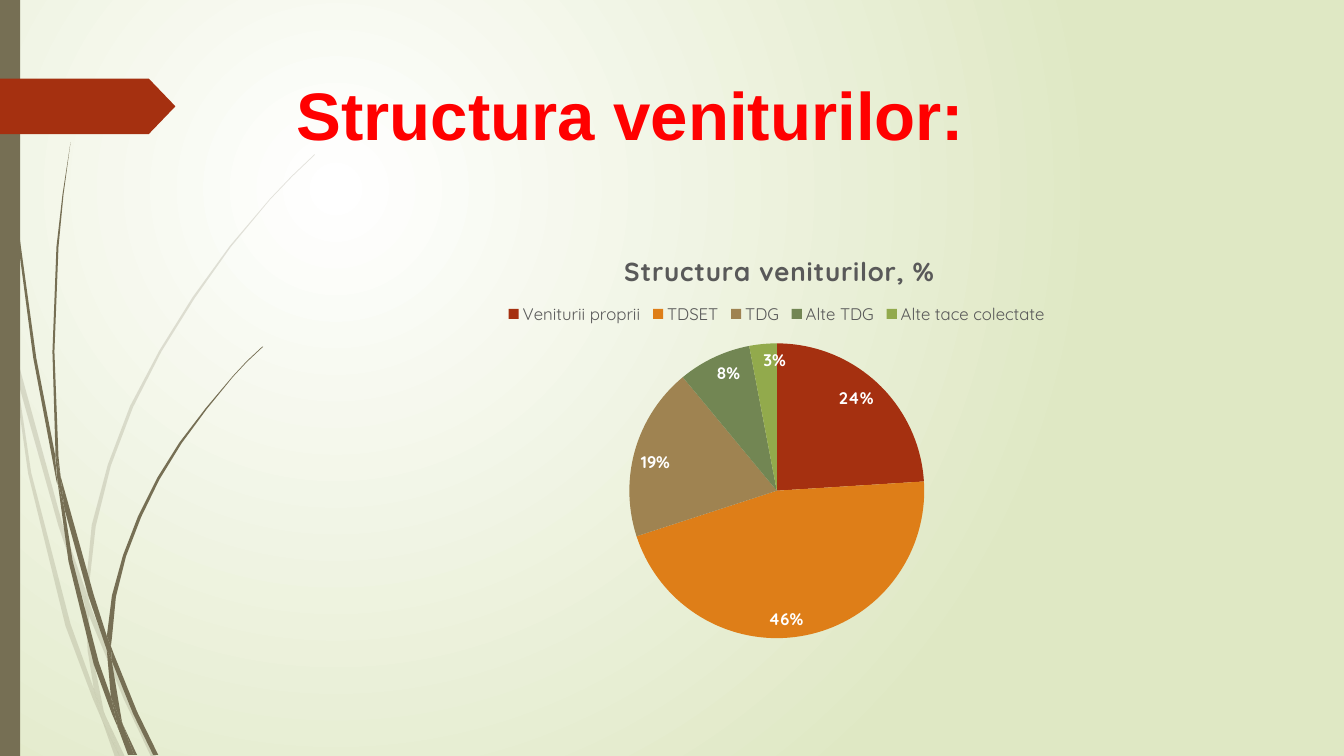
from lxml.etree import SubElement
from pptx import Presentation
from pptx.chart.data import CategoryChartData
from pptx.dml.color import RGBColor
from pptx.enum.chart import (XL_CHART_TYPE as CHART, XL_LABEL_POSITION as LABEL,
                             XL_LEGEND_POSITION as LEGEND)
from pptx.enum.shapes import MSO_SHAPE as SHAPE
from pptx.enum.text import MSO_ANCHOR as ANCHOR, MSO_AUTO_SIZE as AUTO, PP_ALIGN as ALIGN
from pptx.oxml import parse_xml
from pptx.oxml.ns import qn
from pptx.util import Inches, Pt

COLORS = {"white": "FFFFFF", "sage": "DFE8C4", "olive": "766F54", "rust": "A53010",
          "orange": "DE7E18", "tan": "9F8351", "green": "728653", "lime": "92AA4C",
          "red": "FF0000", "grey": "595959"}

REVENUE = [("Veniturii proprii", 24, "rust"), ("TDSET", 46, "orange"), ("TDG", 19, "tan"),
           ("Alte TDG", 8, "green"), ("Alte tace colectate", 3, "lime")]

PALE_BLADES = [
    [(.11, 3.5), (.09, 3.22), (0, 2.82), (0, 2.99), (.1, 3.44)],
    [(.58, 5.22), (.84, 5.99), (.85, 5.86), (.62, 5.2), (.14, 3.45), (.17, 3.76)],
    [(.92, 6.07), (.88, 5.96), (.88, 6.1), (1.23, 6.94), (1.5, 7.51), (1.55, 7.51),
     (1.27, 6.92)],
    [(1.19, 7.51), (1.24, 7.51), (1.05, 7.11)],
    [(.93, 6.83), (.7, 6.19), (.31, 4.69), (.17, 3.76), (.11, 3.5), (.28, 4.7), (.65, 6.21),
     (.92, 6.93), (1.01, 7.14), (.99, 7.07)],
    [(.84, 5.99), (.87, 6.46), (.93, 6.83), (.96, 6.92), (1.05, 7.11), (1.03, 7.06),
     (.91, 6.46), (.88, 6.1), (.88, 6.08)],
    [(.88, 5.84), (.95, 5.22), (1.1, 4.62), (1.32, 4.04), (1.6, 3.49), (1.93, 2.96),
     (2.29, 2.45), (2.68, 1.98), (2.9, 1.75), (3.12, 1.54), (3.12, 1.53), (2.89, 1.75),
     (2.68, 1.97), (2.28, 2.44), (1.91, 2.95), (1.58, 3.48), (1.29, 4.03), (1.07, 4.61),
     (.91, 5.21), (.85, 5.84), (.88, 5.96)],
    [(1.01, 7.14), (1.14, 7.51), (1.19, 7.51)],
    [(.88, 6.08), (.88, 6.1), (.88, 5.96), (.85, 5.86), (.84, 5.99)],
    [(.96, 6.92), (.93, 6.83), (.99, 7.07), (1.01, 7.14), (1.19, 7.51), (1.05, 7.11)],
]
DARK_BLADES = [
    [(.07, 1.1), (.17, 2.33), (.33, 3.55), (.56, 4.77), (.57, 4.81), (.55, 4.57),
     (.55, 4.53), (.36, 3.55), (.19, 2.32), (.08, 1.09), (.05, .48), (.04, 0), (.03, 0),
     (.04, .48)],
    [(.88, 5.92), (1.06, 6.45), (1.06, 6.31), (.93, 5.9), (.6, 4.72), (.64, 5.05)],
    [(1.13, 6.49), (1.1, 6.41), (1.11, 6.56), (1.32, 7.08), (1.52, 7.49), (1.57, 7.49),
     (1.36, 7.06)],
    [(1.1, 6.91), (.98, 6.57), (.72, 5.56), (.64, 5.05), (.57, 4.77), (.68, 5.57),
     (.93, 6.59), (1.11, 7.08), (1.17, 7.22), (1.16, 7.17)],
    [(.6, 4.72), (.58, 4.53), (.54, 3.49), (.58, 2.45), (.63, 1.93), (.7, 1.41),
     (.62, 1.93), (.56, 2.45), (.52, 3.49), (.55, 4.49)],
    [(1.33, 7.49), (1.36, 7.49), (1.22, 7.19)],
    [(.57, 4.77), (.64, 5.05), (.6, 4.72), (.55, 4.49), (.55, 4.53)],
    [(1.11, 6.33), (1.15, 5.92), (1.25, 5.52), (1.4, 5.13), (1.58, 4.76), (1.8, 4.4),
     (2.05, 4.06), (2.31, 3.74), (2.45, 3.59), (2.61, 3.44), (2.6, 3.44), (2.45, 3.58),
     (2.31, 3.73), (2.04, 4.05), (1.78, 4.39), (1.56, 4.74), (1.37, 5.12), (1.22, 5.51),
     (1.11, 5.91), (1.06, 6.31), (1.1, 6.41)],
    [(1.17, 7.22), (1.27, 7.49), (1.31, 7.49)],
    [(1.06, 6.45), (1.1, 6.91), (1.16, 7.06), (1.22, 7.19), (1.21, 7.16), (1.11, 6.56),
     (1.09, 6.51)],
    [(1.06, 6.45), (1.09, 6.51), (1.11, 6.56), (1.1, 6.41), (1.06, 6.31)],
    [(1.16, 7.06), (1.1, 6.91), (1.16, 7.17), (1.17, 7.22), (1.3, 7.49), (1.33, 7.49),
     (1.22, 7.19)],
]


def rgb(name):
    """Return the named colour."""
    return RGBColor.from_string(COLORS[name])


def style_font(font, size, color, name="Quicksand", bold=False):
    """Format a font."""
    font.size, font.name, font.bold = Pt(size), name, bold
    font.color.rgb = rgb(color)


def write(tf, text, align=None, **fmt):
    """Put one formatted run into a text frame."""
    p = tf.paragraphs[0]
    p.alignment = align
    r = p.add_run()
    r.text = text
    style_font(r.font, **fmt)
    return r


def place(parent, index, **box):
    """Give a chart part a manual layout in fractions of the chart."""
    for old in parent.findall(qn("c:layout")):
        parent.remove(old)
    layout = parent.makeelement(qn("c:layout"))
    parent.insert(index, layout)
    manual = SubElement(layout, qn("c:manualLayout"))
    if index == 0:
        SubElement(manual, qn("c:layoutTarget")).set("val", "inner")
    for key in ("x", "y"):
        SubElement(manual, qn(f"c:{key}Mode")).set("val", "edge")
    for key, value in box.items():
        SubElement(manual, qn(f"c:{key}")).set("val", str(value))


class Deck:
    """Hold the presentation, its style and the current slide."""

    def __init__(self):
        """Start a wide presentation with one title-only slide."""
        self.prs = Presentation()
        self.prs.slide_width, self.prs.slide_height = Inches(13.33), Inches(7.5)
        self.s = self.prs.slides.add_slide(self.prs.slide_layouts[5])

    def background(self, inner, outer):
        """Fill the background with a radial gradient."""
        fill = self.s.background.fill
        fill.gradient()
        for stop, color, pos in zip(fill.gradient_stops, (inner, outer), (0, 1)):
            stop.color.rgb, stop.position = rgb(color), pos
        grad = self.s.background._cSld.find(".//" + qn("a:gradFill"))
        grad.remove(grad.find(qn("a:lin")))
        grad.append(parse_xml(
            '<a:path xmlns:a="http://schemas.openxmlformats.org/drawingml/2006/main" '
            'path="circle"><a:fillToRect l="50000" t="50000" r="100000" b="100000"/></a:path>'))

    def paint(self, sp, color, alpha=None):
        """Give a shape a flat fill without line or shadow."""
        sp.shadow.inherit = False
        sp.line.fill.background()
        sp.fill.solid()
        sp.fill.fore_color.rgb = rgb(color)
        if alpha:
            clr = sp._element.spPr.find(qn("a:solidFill"))[0]
            SubElement(clr, qn("a:alpha")).set("val", str(alpha * 1000))

    def blade(self, points, color, alpha=None):
        """Draw one piece of a grass stem."""
        outline = [(x * 100, y * 100) for x, y in points]
        fb = self.s.shapes.build_freeform(*outline[0], scale=Inches(.01))
        fb.add_line_segments(outline[1:], close=True)
        self.paint(fb.convert_to_shape(), color, alpha)

    def shape(self, kind, box, color):
        """Draw a preset shape."""
        sp = self.s.shapes.add_shape(kind, *map(Inches, box))
        self.paint(sp, color)
        return sp

    def title(self, text, box, **fmt):
        """Move and fill the title placeholder."""
        sp = self.s.shapes.title
        sp.left, sp.top, sp.width, sp.height = map(Inches, box)
        tf = sp.text_frame
        tf.word_wrap, tf.auto_size, tf.vertical_anchor = True, AUTO.NONE, ANCHOR.TOP
        write(tf, text, ALIGN.LEFT, **fmt)

    def pie(self, title, rows, box):
        """Draw a pie chart with a title, a legend and percent labels."""
        names, values, colors = zip(*rows)
        data = CategoryChartData()
        data.categories = names
        data.add_series("Series 1", values)
        chart = self.s.shapes.add_chart(CHART.PIE, *map(Inches, box), data).chart
        style_font(chart.font, 10, "grey")
        r = write(chart.chart_title.text_frame, title, size=18.6, color="grey", bold=True)
        r.font._element.set("spc", "50")
        chart.chart_title.include_in_layout = False
        place(chart.chart_title._element, 1, x=.34, y=.03)
        chart.has_legend = True
        legend = chart.legend
        legend.position, legend.include_in_layout = LEGEND.TOP, False
        style_font(legend.font, 12, "grey")
        place(legend._element, 1, x=.22, y=.16, w=.56, h=.06)
        plot = chart.plots[0]
        plot.vary_by_categories = True
        place(chart._chartSpace.chart.plotArea, 0, x=.35, y=.26, w=.3, h=.71)
        for i, color in enumerate(colors):
            fmt = plot.series[0].points[i].format
            fmt.fill.solid()
            fmt.fill.fore_color.rgb = rgb(color)
            fmt.line.fill.background()
        plot.has_data_labels = True
        labels = plot.data_labels
        labels.show_percentage, labels.show_value = True, False
        labels.number_format, labels.number_format_is_linked = "0%", False
        labels.position = LABEL.INSIDE_END
        style_font(labels.font, 12, "white", bold=True)


def main():
    """Build the slide."""
    deck = Deck()
    deck.background("white", "sage")
    for points in PALE_BLADES:
        deck.blade(points, "olive", alpha=20)
    for points in DARK_BLADES:
        deck.blade(points, "olive")
    deck.shape(SHAPE.RECTANGLE, (0, 0, .2, 7.5), "olive")
    arrow = deck.shape(SHAPE.PENTAGON, (0, .78, 1.74, .55), "rust")
    arrow.adjustments[0] = .48
    deck.title("Structura veniturilor:", (2.84, .68, 9.75, 1.4),
               size=48, color="red", name="Arial", bold=True)
    deck.pie("Structura veniturilor, %", REVENUE, (2.83, 2.33, 9.75, 4.13))
    deck.prs.save("out.pptx")


if __name__ == "__main__":
    main()
